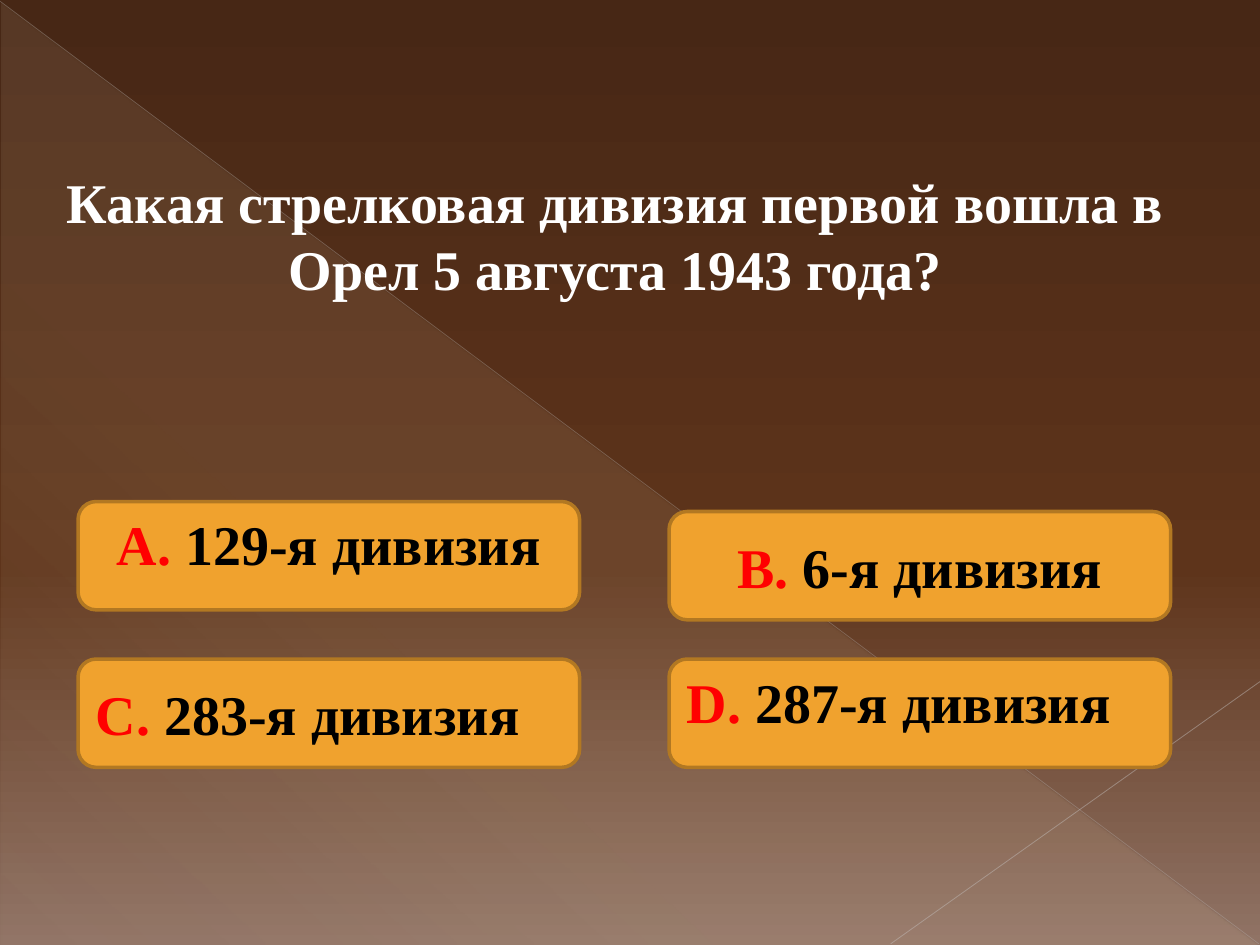
"""Build a quiz slide with one question and four answers."""
from lxml import etree
from pptx import Presentation
from pptx.dml.color import RGBColor
from pptx.enum.shapes import MSO_CONNECTOR, MSO_SHAPE
from pptx.enum.text import MSO_ANCHOR, MSO_AUTO_SIZE, PP_ALIGN
from pptx.oxml.ns import qn
from pptx.util import Pt

BOX = MSO_SHAPE.FLOWCHART_ALTERNATE_PROCESS
WEDGE = MSO_SHAPE.RIGHT_TRIANGLE
LINE = MSO_CONNECTOR.STRAIGHT
MIDDLE = MSO_ANCHOR.MIDDLE
FIXED = MSO_AUTO_SIZE.NONE
LEFT, CENTER = PP_ALIGN.LEFT, PP_ALIGN.CENTER

DARK = RGBColor(0x47, 0x27, 0x15)
BROWN = RGBColor(0x5E, 0x34, 0x1B)
MAUVE = RGBColor(0x90, 0x73, 0x65)
CREAM = RGBColor(0xFB, 0xEE, 0xC9)
GREY = RGBColor(0xBC, 0xB7, 0xB4)
PALE = RGBColor(0xC4, 0xBF, 0xBD)
AMBER = RGBColor(0xF0, 0xA2, 0x2E)
OCHRE = RGBColor(0xB2, 0x78, 0x22)
RED = RGBColor(0xFF, 0, 0)
BLACK = RGBColor(0, 0, 0)
WHITE = RGBColor(0xFF, 0xFF, 0xFF)


class Quiz:
    """Hold the text style and the current slide."""

    def __init__(self, deck, font, size):
        self.font, self.size = font, size
        self.slide = deck.slides.add_slide(deck.slide_layouts[5])
        self.shapes = self.slide.shapes

    def tint(self, node, color, alpha):
        part = etree.SubElement(node, qn("a:srgbClr"), val=str(color))
        if alpha < 100:
            etree.SubElement(part, qn("a:alpha"), val=str(alpha * 1000))

    def blend(self, fill, root, stops, angle):
        fill.gradient()
        grad = root.find(".//" + qn("a:gradFill"))
        group = grad.find(qn("a:gsLst"))
        for old in list(group):
            group.remove(old)
        for place, color, alpha in stops:
            stop = etree.SubElement(group, qn("a:gs"), pos=str(place * 1000))
            self.tint(stop, color, alpha)
        grad.find(qn("a:lin")).set("ang", str(angle * 60000))

    def ground(self, stops, angle):
        self.blend(self.slide.background.fill, self.slide._element, stops, angle)

    def wedge(self, x, y, w, h, stops, angle):
        shape = self.shapes.add_shape(WEDGE, Pt(x), Pt(y), Pt(w), Pt(h))
        shape.shadow.inherit = False
        shape.line.fill.background()
        self.blend(shape.fill, shape._element, stops, angle)

    def line(self, x, y, right, base, color, width, alpha):
        line = self.shapes.add_connector(LINE, Pt(x), Pt(y), Pt(right), Pt(base))
        line.line.width = Pt(width)
        line.line.color.rgb = color
        props = line._element.spPr
        fill = props.find(".//" + qn("a:solidFill"))
        fill.remove(fill[0])
        self.tint(fill, color, alpha)
        etree.SubElement(props, qn("a:effectLst"))

    def label(self, shape, runs, align, lift):
        frame = shape.text_frame
        frame.word_wrap = True
        frame.auto_size = FIXED
        frame.vertical_anchor = MIDDLE
        frame.margin_left = frame.margin_right = Pt(7.2)
        frame.margin_top, frame.margin_bottom = Pt(3.6), Pt(3.6 + lift)
        para = frame.paragraphs[0]
        para.alignment = align
        for text, color in runs:
            run = para.add_run()
            run.text = text
            run.font.name, run.font.size = self.font, Pt(self.size)
            run.font.bold = True
            run.font.color.rgb = color

    def box(self, x, y, w, h, mark, text, align, lift):
        shape = self.shapes.add_shape(BOX, Pt(x), Pt(y), Pt(w), Pt(h))
        shape.shadow.inherit = False
        shape.fill.solid()
        shape.fill.fore_color.rgb = AMBER
        shape.line.color.rgb = OCHRE
        shape.line.width = Pt(2)
        self.label(shape, [(mark, RED), (text, BLACK)], align, lift)

    def title(self, x, y, w, h, text, lift):
        shape = self.shapes.title
        shape.left, shape.top, shape.width, shape.height = Pt(x), Pt(y), Pt(w), Pt(h)
        self.label(shape, [(text, WHITE)], CENTER, lift)
        self.shapes._spTree.append(shape._element)


def main():
    deck = Presentation()
    deck.slide_width, deck.slide_height = Pt(720), Pt(540)
    quiz = Quiz(deck, "Times New Roman", 32)
    quiz.ground([(0, DARK, 100), (60, BROWN, 100), (100, MAUVE, 100)], 90)
    quiz.wedge(0.7, 1.4, 718.6, 538.6,
               [(0, CREAM, 10), (70, CREAM, 8), (100, CREAM, 1)], 133)
    quiz.line(0, 0.7, 719.3, 539.3, GREY, 0.39, 35)
    quiz.line(720, 389.5, 509, 539.3, PALE, 0.47, 45)
    near, far, low = 44.6, 382.3, 376.6
    for x, y, mark, text, align, lift in (
        (near, 286.6, "А. ", "129-я дивизия", CENTER, 14),
        (near, low, "С. ", "283-я дивизия", LEFT, 0),
        (far, 292.3, "В.", " 6-я дивизия", CENTER, 0),
        (far, low, "D.", " 287-я дивизия", LEFT, 14),
    ):
        quiz.box(x, y, 286.6, 61.9, mark, text, align, lift)
    quiz.title(0, 88.6, 703.4, 106.6,
               "Какая стрелковая дивизия первой вошла в Орел 5 августа 1943 года?", 16)
    deck.save("out.pptx")


if __name__ == "__main__":
    main()
